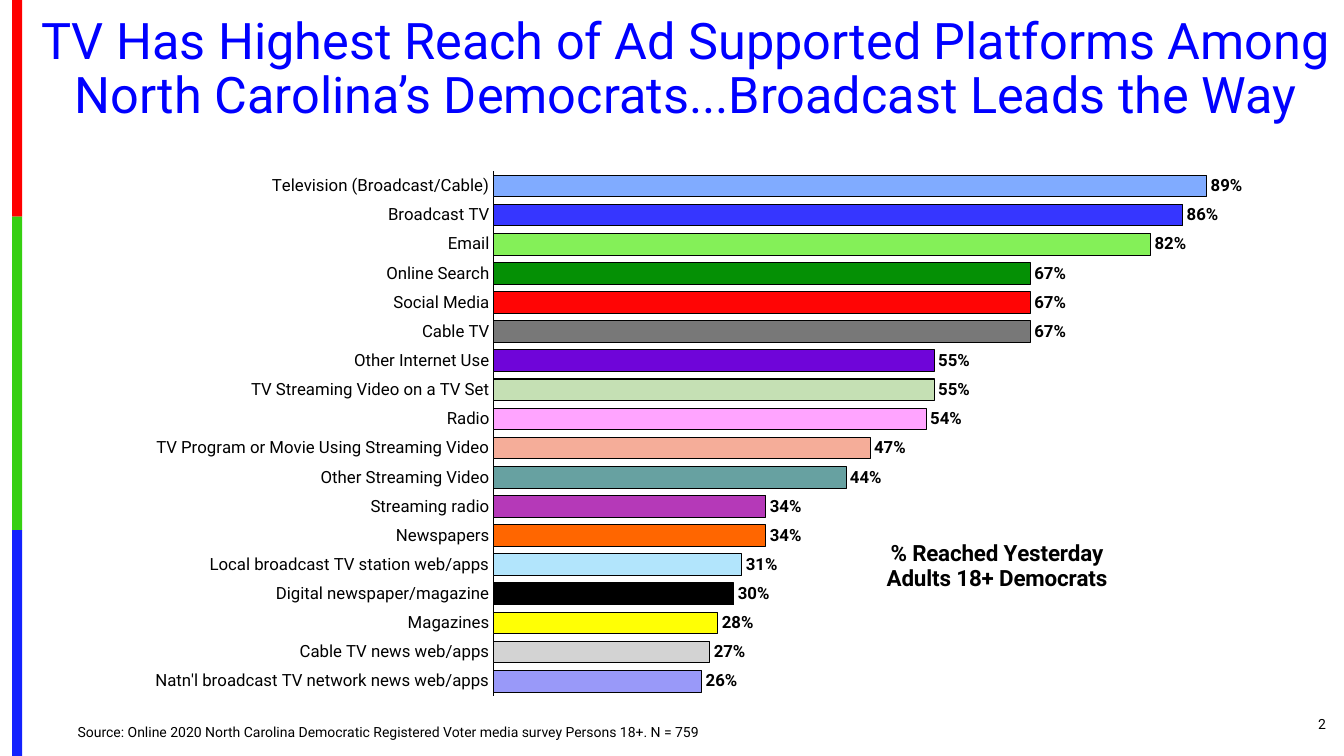
from lxml import etree
from pptx import Presentation
from pptx.chart.data import CategoryChartData
from pptx.dml.color import RGBColor
from pptx.enum import chart as ch, shapes, text
from pptx.oxml import ns
from pptx.util import Inches, Pt

FONT = "Roboto"
BLACK = RGBColor(0, 0, 0)
TITLE_BLUE = RGBColor(0, 0, 0xFF)

HEADLINE = ("TV Has Highest Reach of Ad Supported Platforms Among "
            "North Carolina’s Democrats...Broadcast Leads the Way")
SOURCE = ("Source: Online 2020 North Carolina Democratic Registered Voter "
          "media survey Persons 18+. N = 759")
PAGE = "2"
CHART_CAPTION = "% Reached Yesterday\nAdults 18+ Democrats"

STRIPE_LEFT, STRIPE_WIDTH = 0.12, 0.1
STRIPES = [
    (2.15, RGBColor(0xFE, 0x00, 0x00)),
    (3.11, RGBColor(0x36, 0xCF, 0x12)),
    (2.24, RGBColor(0x13, 0x22, 0xFE)),
]

PLATFORMS = [
    ("Television (Broadcast/Cable)", 0.89, RGBColor(0x80, 0xAB, 0xFF)),
    ("Broadcast TV", 0.86, RGBColor(0x36, 0x36, 0xFF)),
    ("Email", 0.82, RGBColor(0x84, 0xF0, 0x58)),
    ("Online Search", 0.67, RGBColor(0x05, 0x90, 0x05)),
    ("Social Media", 0.67, RGBColor(0xFF, 0x05, 0x05)),
    ("Cable TV", 0.67, RGBColor(0x78, 0x78, 0x78)),
    ("Other Internet Use", 0.55, RGBColor(0x6F, 0x05, 0xD9)),
    ("TV Streaming Video on a TV Set", 0.55, RGBColor(0xC5, 0xE0, 0xB4)),
    ("Radio", 0.54, RGBColor(0xFF, 0xA4, 0xFF)),
    ("TV Program or Movie Using Streaming Video", 0.47, RGBColor(0xF5, 0xAD, 0x99)),
    ("Other Streaming Video", 0.44, RGBColor(0x67, 0xA1, 0xA1)),
    ("Streaming radio", 0.34, RGBColor(0xB5, 0x39, 0xB8)),
    ("Newspapers", 0.34, RGBColor(0xFF, 0x66, 0x00)),
    ("Local broadcast TV station web/apps", 0.31, RGBColor(0xB2, 0xE5, 0xFC)),
    ("Digital newspaper/magazine", 0.30, BLACK),
    ("Magazines", 0.28, RGBColor(0xFF, 0xFF, 0x05)),
    ("Cable TV news web/apps", 0.27, RGBColor(0xD3, 0xD3, 0xD3)),
    ("Natn'l broadcast TV network news web/apps", 0.26, RGBColor(0x99, 0x99, 0xF9)),
]


def style_font(font, size, bold=False, color=BLACK):
    """Set the face, size, weight and colour of a font."""
    font.name, font.size, font.bold = FONT, Pt(size), bold
    font.color.rgb = color


def write(frame, words, size=10, bold=False, color=BLACK, align=None, spacing=None):
    """Fill a text frame with one paragraph per line of words."""
    for number, line in enumerate(words.split("\n")):
        paragraph = frame.add_paragraph() if number else frame.paragraphs[0]
        if align is not None:
            paragraph.alignment = align
        if spacing:
            paragraph.line_spacing = spacing
        run = paragraph.add_run()
        run.text = line
        style_font(run.font, size, bold, color)


def move(part, left, top, width, height):
    """Set the position and size of a shape in inches."""
    part.left, part.top = Inches(left), Inches(top)
    part.width, part.height = Inches(width), Inches(height)


def set_layout(holder, index, **values):
    """Give a chart element a manual layout."""
    for old in holder.findall(ns.qn("c:layout")):
        holder.remove(old)
    layout = etree.Element(ns.qn("c:layout"))
    manual = etree.SubElement(layout, ns.qn("c:manualLayout"))
    for tag, value in values.items():
        etree.SubElement(manual, ns.qn("c:" + tag)).set("val", str(value))
    holder.insert(index, layout)


def add_stripes(slide):
    """Stack the coloured stripes down the left edge."""
    top = 0
    for height, color in STRIPES:
        stripe = slide.shapes.add_shape(
            shapes.MSO_SHAPE.RECTANGLE, Inches(STRIPE_LEFT), Inches(top),
            Inches(STRIPE_WIDTH), Inches(height))
        stripe.shadow.inherit = False
        stripe.fill.solid()
        stripe.fill.fore_color.rgb = color
        stripe.line.fill.background()
        top += height


def add_reach_chart(slide):
    """Add the bar chart of daily reach by platform."""
    data = CategoryChartData(number_format="0%")
    data.categories = [name for name, _, _ in PLATFORMS]
    data.add_series("Series 1", [reach for _, reach, _ in PLATFORMS])
    chart = slide.shapes.add_chart(
        ch.XL_CHART_TYPE.BAR_CLUSTERED, Inches(0.68), Inches(1.42),
        Inches(12.25), Inches(5.5), data).chart
    style_font(chart.font, 10)
    chart.has_legend = False

    caption = chart.chart_title
    write(caption.text_frame, CHART_CAPTION, size=16, bold=True,
          align=text.PP_ALIGN.CENTER)
    caption.include_in_layout = True
    set_layout(caption._element, 1, xMode="edge", yMode="edge", x=0.66, y=0.71)
    set_layout(chart._chartSpace.chart.plotArea, 0, layoutTarget="inner",
               xMode="edge", yMode="edge", x=0.344, y=0.051, w=0.649, h=0.946)

    names = chart.category_axis
    names.reverse_order = True
    names.major_tick_mark = names.minor_tick_mark = ch.XL_TICK_MARK.NONE
    names.format.line.color.rgb = BLACK
    names.format.line.width = Pt(1)
    style_font(names.tick_labels.font, 12)
    scale = chart.value_axis
    scale.minimum_scale, scale.maximum_scale = 0, 1
    scale.has_major_gridlines = False
    scale.visible = False

    plot = chart.plots[0]
    plot.gap_width = 34
    plot.vary_by_categories = False
    plot.has_data_labels = True
    labels = plot.data_labels
    labels.show_value = True
    labels.number_format, labels.number_format_is_linked = "0%", False
    labels.position = ch.XL_LABEL_POSITION.OUTSIDE_END
    style_font(labels.font, 12, bold=True)
    for number, (_, _, color) in enumerate(PLATFORMS):
        bar = plot.series[0].points[number].format
        bar.fill.solid()
        bar.fill.fore_color.rgb = color
        bar.line.color.rgb = BLACK
        bar.line.width = Pt(0.75)


def main():
    """Build the slide and save it."""
    deck = Presentation()
    deck.slide_width, deck.slide_height = Inches(13.33), Inches(7.5)
    slide = deck.slides.add_slide(deck.slide_layouts[1])
    add_stripes(slide)

    headline = slide.shapes.title
    move(headline, 0.19, 0.1, 13.23, 1.19)
    headline.text_frame.vertical_anchor = text.MSO_ANCHOR.MIDDLE
    write(headline.text_frame, HEADLINE, size=36, color=TITLE_BLUE,
          align=text.PP_ALIGN.CENTER, spacing=0.9)

    page = slide.shapes.add_textbox(0, 0, 0, 0)
    move(page, 12.17, 6.98, 1.08, 0.4)
    page.text_frame.word_wrap = True
    page.text_frame.vertical_anchor = text.MSO_ANCHOR.MIDDLE
    write(page.text_frame, PAGE, align=text.PP_ALIGN.RIGHT)

    add_reach_chart(slide)

    source = slide.placeholders[1]
    move(source, 0.67, 7.15, 10, 0.25)
    source.text_frame.vertical_anchor = text.MSO_ANCHOR.BOTTOM
    properties = source.text_frame.paragraphs[0]._p.get_or_add_pPr()
    properties.set("marL", "0")
    properties.set("indent", "0")
    etree.SubElement(properties, ns.qn("a:buNone"))
    source.text_frame.paragraphs[0].space_before = Pt(0)
    write(source.text_frame, SOURCE, spacing=0.9)

    deck.save("out.pptx")


if __name__ == "__main__":
    main()
